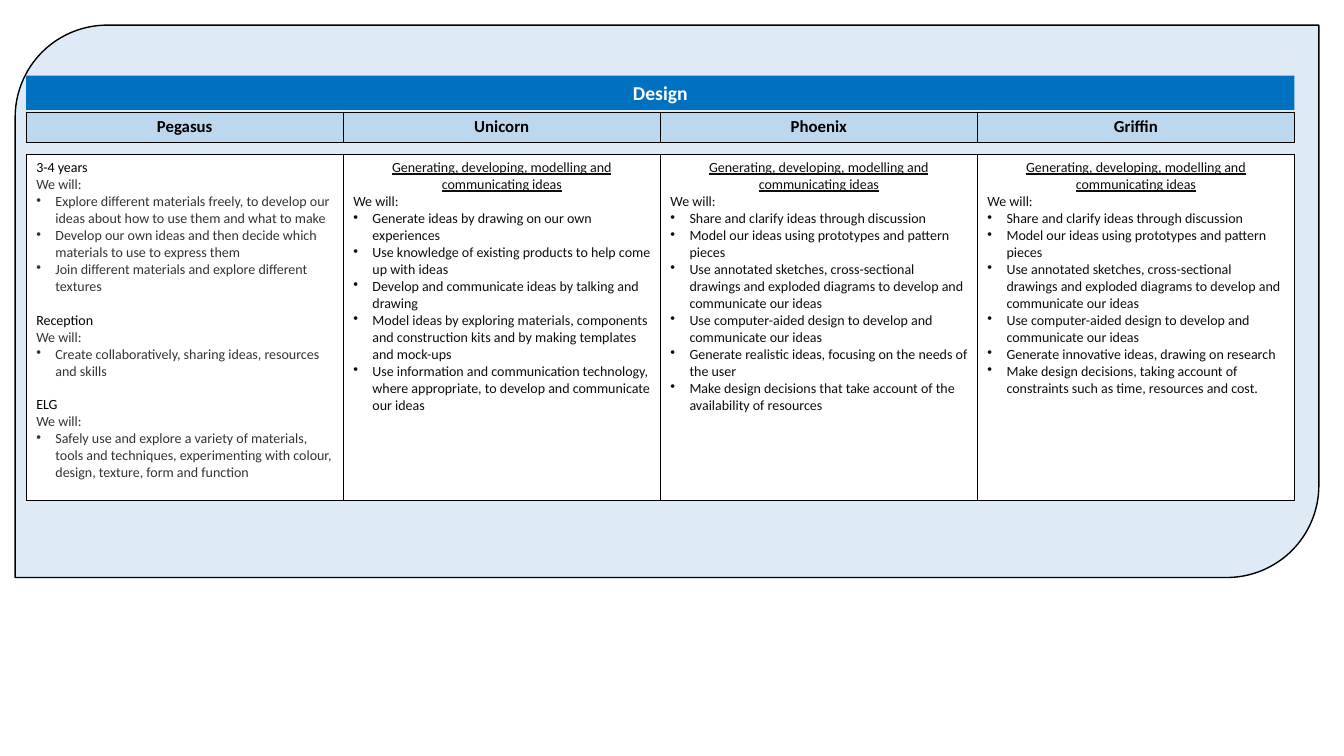
from dataclasses import dataclass
from typing import Any

from lxml import etree
from pptx import Presentation
from pptx.dml.color import RGBColor
from pptx.enum.shapes import MSO_SHAPE
from pptx.enum.text import MSO_ANCHOR, MSO_AUTO_SIZE, PP_ALIGN
from pptx.oxml.ns import qn
from pptx.util import Emu, Inches, Pt

DIAGONAL_ROUND = MSO_SHAPE.ROUND_2_DIAG_RECTANGLE
MIDDLE, NO_FIT = MSO_ANCHOR.MIDDLE, MSO_AUTO_SIZE.NONE
LEFT, CENTER = PP_ALIGN.LEFT, PP_ALIGN.CENTER
WIDTH, HEIGHT = Inches(13.33), Inches(7.5)


@dataclass(frozen=True)
class Theme:
    font: str = "Calibri"
    title_size: float = 14
    head_size: float = 12
    body_size: float = 10
    panel: str = "DEEBF7"
    banner: str = "0070C0"
    head: str = "BDD7EE"
    white: str = "FFFFFF"
    black: str = "000000"
    grey: str = "333333"
    ink: str = "0D0D0D"
    outline: float = 1
    border: float = 0.5
    indent: float = 0.19
    stage_gap: float = 12


THEME = Theme()


@dataclass(frozen=True)
class Box:
    left: float
    top: float
    width: float
    height: float

    def emu(self) -> tuple[Emu, ...]:
        shares = (self.left, self.top, self.width, self.height)
        return tuple(Emu(round(share * side / 100))
                     for share, side in zip(shares, (WIDTH, HEIGHT) * 2))


@dataclass(frozen=True)
class Line:
    text: str
    color: str = THEME.black
    size: float = THEME.body_size
    bold: bool = False
    underline: bool = False
    align: Any = LEFT
    bullet: bool = False
    before: float = 0


@dataclass(frozen=True)
class Stage:
    name: str
    goals: tuple[str, ...]


@dataclass(frozen=True)
class House:
    name: str
    lines: list[Line]


PANEL = Box(1.13, 3.33, 97, 73.07)
BANNER = Box(1.95, 10, 94.37, 4.53)
HEADS = Box(1.95, 14.8, 94.37, 4)
BODIES = Box(1.95, 20.4, 94.37, 45.73)


def we_will(goals: tuple[str, ...], color: str) -> list[Line]:
    return [Line("We will:", color)] + [Line(g, color, bullet=True) for g in goals]


def early_years(stages: tuple[Stage, ...]) -> list[Line]:
    lines = []
    for i, stage in enumerate(stages):
        lines.append(Line(stage.name, before=THEME.stage_gap if i else 0))
        lines += we_will(stage.goals, THEME.grey)
    return lines


def design_ideas(*goals: str) -> list[Line]:
    topic = "Generating, developing, modelling and communicating ideas"
    return [Line(topic, THEME.ink, underline=True, align=CENTER)] + we_will(goals, THEME.ink)


SHARED_GOALS = (
    "Share and clarify ideas through discussion",
    "Model our ideas using prototypes and pattern pieces",
    "Use annotated sketches, cross-sectional drawings and exploded diagrams "
    "to develop and communicate our ideas",
    "Use computer-aided design to develop and communicate our ideas",
)
STAGES = (
    Stage("3-4 years", (
        "Explore different materials freely, to develop our ideas about how to use them "
        "and what to make",
        "Develop our own ideas and then decide which materials to use to express them",
        "Join different materials and explore different textures",
    )),
    Stage("Reception", ("Create collaboratively, sharing ideas, resources and skills",)),
    Stage("ELG", (
        "Safely use and explore a variety of materials, tools and techniques, "
        "experimenting with colour, design, texture, form and function",
    )),
)
HOUSES = (
    House("Pegasus", early_years(STAGES)),
    House("Unicorn", design_ideas(
        "Generate ideas by drawing on our own experiences",
        "Use knowledge of existing products to help come up with ideas",
        "Develop and communicate ideas by talking and drawing",
        "Model ideas by exploring materials, components and construction kits "
        "and by making templates and mock-ups",
        "Use information and communication technology, where appropriate, "
        "to develop and communicate our ideas",
    )),
    House("Phoenix", design_ideas(
        *SHARED_GOALS,
        "Generate realistic ideas, focusing on the needs of the user",
        "Make design decisions that take account of the availability of resources",
    )),
    House("Griffin", design_ideas(
        *SHARED_GOALS,
        "Generate innovative ideas, drawing on research",
        "Make design decisions, taking account of constraints such as time, "
        "resources and cost.",
    )),
)


def apply(target: Any, values: dict[str, Any]) -> None:
    for name, value in values.items():
        setattr(target, name, value)


def paint(target: Any, color: str) -> None:
    target.fill.solid()
    target.fill.fore_color.rgb = RGBColor.from_string(color)


def write(tf: Any, lines: list[Line]) -> None:
    for i, line in enumerate(lines):
        p = tf.add_paragraph() if i else tf.paragraphs[0]
        apply(p, {"alignment": line.align, "space_before": Pt(line.before)})
        if line.bullet:
            pPr = p._p.get_or_add_pPr()
            pPr.set("marL", str(Inches(THEME.indent)))
            pPr.set("indent", str(-Inches(THEME.indent)))
            etree.SubElement(pPr, qn("a:buChar"), char="•")
        r = p.add_run()
        r.text = line.text
        apply(r.font, {"name": THEME.font, "size": Pt(line.size),
                       "bold": line.bold, "underline": line.underline})
        r.font.color.rgb = RGBColor.from_string(line.color)


def add_borders(cell: Any) -> None:
    tcPr = cell._tc.get_or_add_tcPr()
    for side in ("lnL", "lnR", "lnT", "lnB"):
        ln = etree.SubElement(tcPr, qn(f"a:{side}"), w=str(Pt(THEME.border)))
        fill = etree.SubElement(ln, qn("a:solidFill"))
        etree.SubElement(fill, qn("a:srgbClr"), val=THEME.black)


def add_row_table(s: Any, box: Box, color: str, contents: list[list[Line]]) -> None:
    table = s.shapes.add_table(1, len(contents), *box.emu()).table
    apply(table, {"first_row": False, "horz_banding": False})
    for cell, lines in zip(table.rows[0].cells, contents):
        add_borders(cell)
        paint(cell, color)
        write(cell.text_frame, lines)


def main() -> None:
    prs = Presentation()
    apply(prs, {"slide_width": WIDTH, "slide_height": HEIGHT})
    s = prs.slides.add_slide(prs.slide_layouts[5])

    panel = s.shapes.add_shape(DIAGONAL_ROUND, *PANEL.emu())
    panel.shadow.inherit = False
    paint(panel, THEME.panel)
    panel.line.color.rgb = RGBColor.from_string(THEME.black)
    panel.line.width = Pt(THEME.outline)

    title = s.shapes.title
    panel.element.addnext(title.element)
    apply(title, dict(zip(("left", "top", "width", "height"), BANNER.emu())))
    paint(title, THEME.banner)
    apply(title.text_frame, {"vertical_anchor": MIDDLE, "auto_size": NO_FIT, "word_wrap": True})
    write(title.text_frame, [Line("Design", THEME.white, THEME.title_size, True, align=CENTER)])

    add_row_table(s, HEADS, THEME.head, [
        [Line(house.name, size=THEME.head_size, bold=True, align=CENTER)] for house in HOUSES])
    add_row_table(s, BODIES, THEME.white, [house.lines for house in HOUSES])
    prs.save("out.pptx")


if __name__ == "__main__":
    main()
